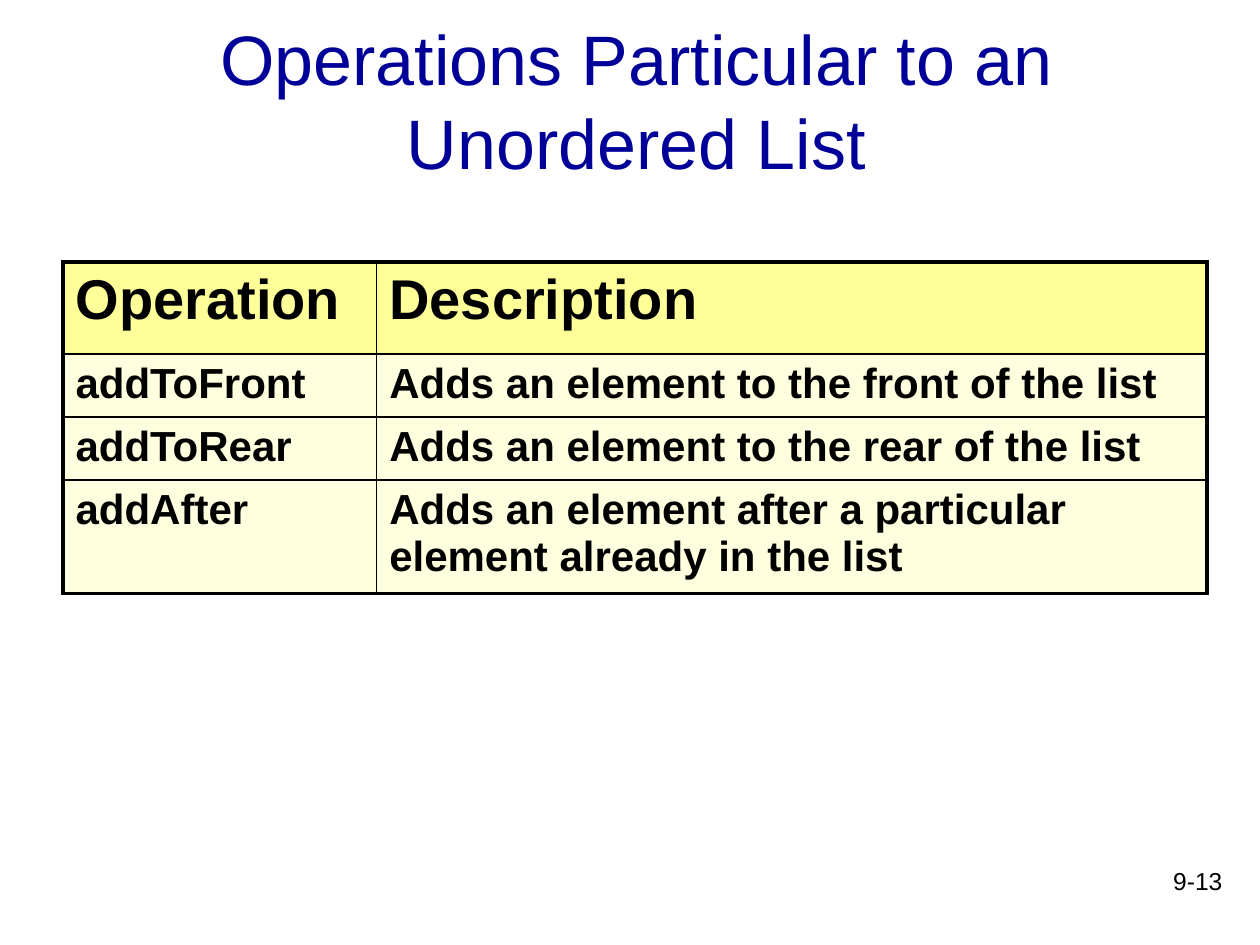
from typing import NamedTuple

from lxml.etree import SubElement
from pptx import Presentation
from pptx.dml.color import RGBColor
from pptx.enum.text import MSO_ANCHOR, PP_ALIGN
from pptx.oxml.ns import qn
from pptx.util import Inches, Pt

WIDTH, HEIGHT = Inches(10), Inches(7.5)
BLACK = RGBColor(0x00, 0x00, 0x00)
NAVY = RGBColor(0x00, 0x00, 0x99)
YELLOW = RGBColor(0xFF, 0xFF, 0x99)
CREAM = RGBColor(0xFF, 0xFF, 0xDF)
THICK, THIN = Pt(2.25), Pt(1)
COLS = (2.49, 6.59)


class Row(NamedTuple):
    name: str
    text: str
    height: float = 0.5
    size: int = 24
    fill: RGBColor = CREAM


ROWS = (
    Row("Operation", "Description", 0.73, 32, YELLOW),
    Row("addToFront", "Adds an element to the front of the list"),
    Row("addToRear", "Adds an element to the rear of the list"),
    Row("addAfter", "Adds an element after a particular element already in the list", 0.9),
)


def write(frame, text: str, *, size: int, color=BLACK, bold=False,
          align=PP_ALIGN.LEFT, anchor=MSO_ANCHOR.TOP):
    frame.word_wrap = True
    frame.vertical_anchor = anchor
    par = frame.paragraphs[0]
    par.alignment = align
    run = par.add_run()
    run.text = text
    font = run.font
    font.name, font.size, font.bold = "Arial", Pt(size), bold
    font.color.rgb = color
    return par


def add_box(slide, left: float, top: float, width: float, height: float):
    """Add a text box placed by shares of the slide's size."""
    box = slide.shapes.add_textbox(int(left * WIDTH), int(top * HEIGHT),
                                   int(width * WIDTH), int(height * HEIGHT))
    return box.text_frame


def edge(cell, side: str, width: int) -> None:
    props = cell._tc.get_or_add_tcPr()
    line = SubElement(props, qn(f"a:ln{side}"), w=str(int(width)))
    fill = SubElement(line, qn("a:solidFill"))
    SubElement(fill, qn("a:srgbClr"), val=str(BLACK))


def fill_cell(cell, text: str, row: Row, outer: dict[str, bool]) -> None:
    for side, thick in outer.items():
        edge(cell, side, THICK if thick else THIN)
    cell.fill.solid()
    cell.fill.fore_color.rgb = row.fill
    par = write(cell.text_frame, text, size=row.size, bold=True)
    # Space before as a share of the line
    space = SubElement(par._p.get_or_add_pPr(), qn("a:spcBef"))
    SubElement(space, qn("a:spcPct"), val="20000")


def add_grid(slide) -> None:
    high = sum(row.height for row in ROWS)
    frame = slide.shapes.add_table(len(ROWS), len(COLS), Inches(0.5), Inches(2.08),
                                   Inches(sum(COLS)), Inches(high))
    table = frame.table
    table.horz_banding = table.first_row = False
    for col, width in zip(table.columns, COLS):
        col.width = Inches(width)
    for r, row in enumerate(ROWS):
        table.rows[r].height = Inches(row.height)
        for c, text in enumerate((row.name, row.text)):
            outer = {"L": c == 0, "R": c == len(COLS) - 1,
                     "T": r == 0, "B": r == len(ROWS) - 1}
            fill_cell(table.cell(r, c), text, row, outer)


def main() -> None:
    deck = Presentation()
    deck.slide_width, deck.slide_height = WIDTH, HEIGHT
    slide = deck.slides.add_slide(deck.slide_layouts[6])
    write(add_box(slide, 0.78, 0.91, 0.2, 0.07), "9-13", size=14, align=PP_ALIGN.RIGHT)
    write(add_box(slide, 0.08, 0.02, 0.85, 0.17), "Operations Particular to an Unordered List",
          size=40, color=NAVY, align=PP_ALIGN.CENTER, anchor=MSO_ANCHOR.MIDDLE)
    add_grid(slide)
    deck.save("out.pptx")


if __name__ == "__main__":
    main()
